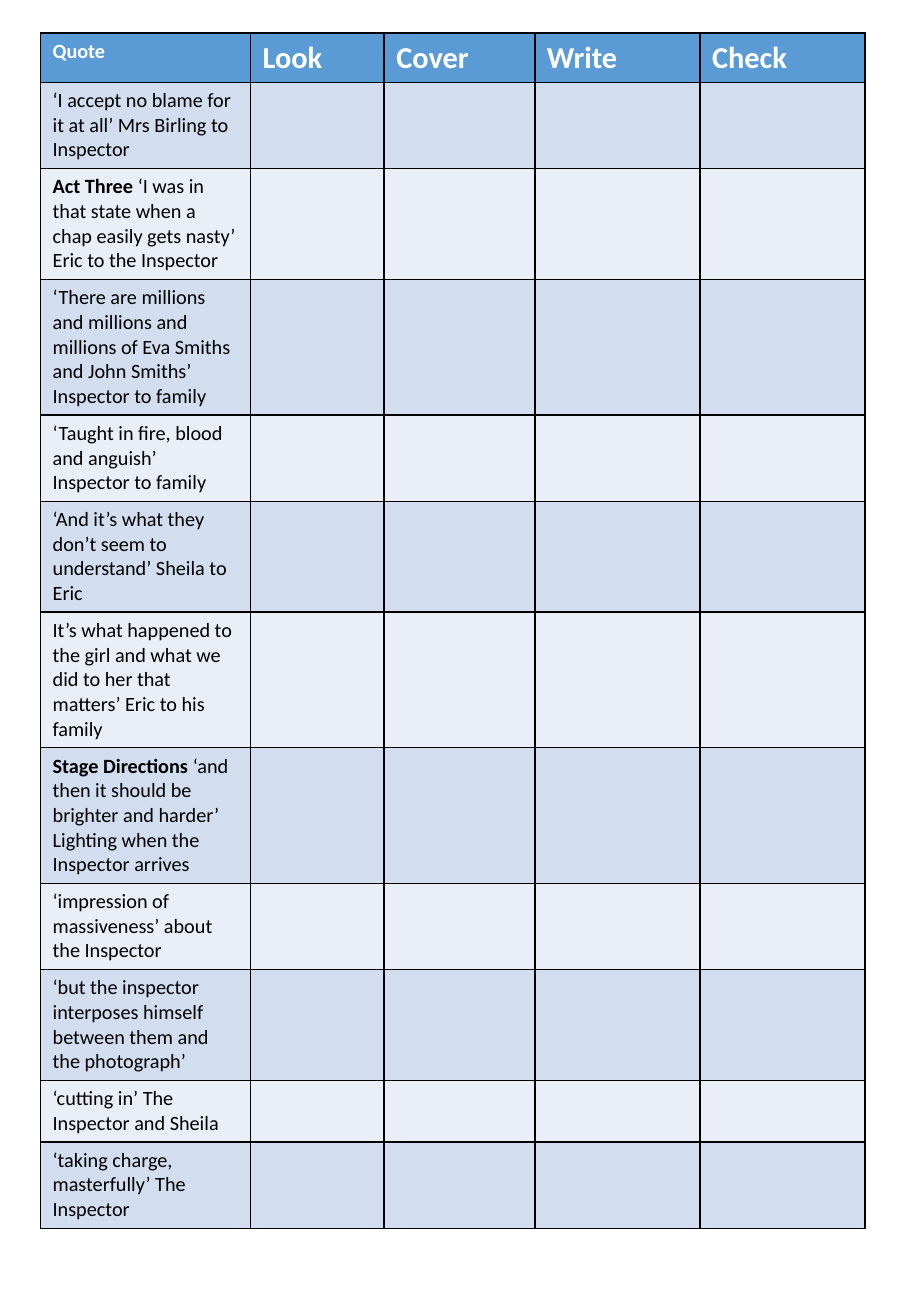
from pptx import Presentation
from pptx.dml.color import RGBColor
from pptx.oxml.ns import qn
from pptx.util import Pt
from lxml import etree

COLORS = {"head": "5B9BD5", "odd": "D2DEEF", "even": "EAEFF7",
          "line": "000000", "text": "000000", "title": "FFFFFF"}
FONT = "Calibri"
HEADS = ["Quote", "Look", "Cover", "Write", "Check"]
WIDTHS = [124.5, 79.2, 89.3, 97.9, 97.9]
ROW_H = 29.2

# Each quote: bold lead-in, then the plain text
QUOTES = [
    ("", "‘I accept no blame for it at all’ Mrs Birling to Inspector"),
    ("Act Three ", "‘I was in that state when a chap easily gets nasty’ Eric to the Inspector"),
    ("", "‘There are millions and millions and millions of Eva Smiths and John Smiths’ Inspector to family"),
    ("", "‘Taught in fire, blood and anguish’ Inspector to family"),
    ("", "‘And it’s what they don’t seem to understand’ Sheila to Eric"),
    ("", "It’s what happened to the girl and what we did to her that matters’ Eric to his family"),
    ("Stage Directions ", "‘and then it should be brighter and harder’ Lighting when the Inspector arrives"),
    ("", "‘impression of massiveness’ about the Inspector"),
    ("", "‘but the inspector interposes himself between them and the photograph’"),
    ("", "‘cutting in’ The Inspector and Sheila"),
    ("", "‘taking charge, masterfully’ The Inspector"),
]


def paint(cell, color):
    """Give a cell its black borders and its fill."""
    props = cell._tc.get_or_add_tcPr()
    for side in ("a:lnL", "a:lnR", "a:lnT", "a:lnB"):
        line = etree.SubElement(props, qn(side), w=str(Pt(1)))
        fill = etree.SubElement(line, qn("a:solidFill"))
        etree.SubElement(fill, qn("a:srgbClr"), val=COLORS["line"])
    cell.fill.solid()
    cell.fill.fore_color.rgb = RGBColor.from_string(COLORS[color])


def write(cell, text, size, bold, color):
    run = cell.text_frame.paragraphs[0].add_run()
    run.text = text
    run.font.name = FONT
    run.font.size = Pt(size)
    run.font.bold = bold
    run.font.color.rgb = RGBColor.from_string(COLORS[color])


prs = Presentation()
prs.slide_width = Pt(540)
prs.slide_height = Pt(780)
slide = prs.slides.add_slide(prs.slide_layouts[6])

count = len(QUOTES) + 1
frame = slide.shapes.add_table(count, len(HEADS), Pt(24), Pt(19.6),
                               Pt(sum(WIDTHS)), Pt(ROW_H * count))
table = frame.table
for col, width in zip(table.columns, WIDTHS):
    col.width = Pt(width)

for i, row in enumerate(table.rows):
    row.height = Pt(ROW_H)
    shade = "head" if i == 0 else "odd" if i % 2 else "even"
    for cell in row.cells:
        paint(cell, shade)

for i, head in enumerate(HEADS):
    write(table.cell(0, i), head, 18 if i else 12, True, "title")

for i, (lead, quote) in enumerate(QUOTES, 1):
    cell = table.cell(i, 0)
    if lead:
        write(cell, lead, 12, True, "text")
    write(cell, quote, 12, False, "text")

prs.save("out.pptx")
